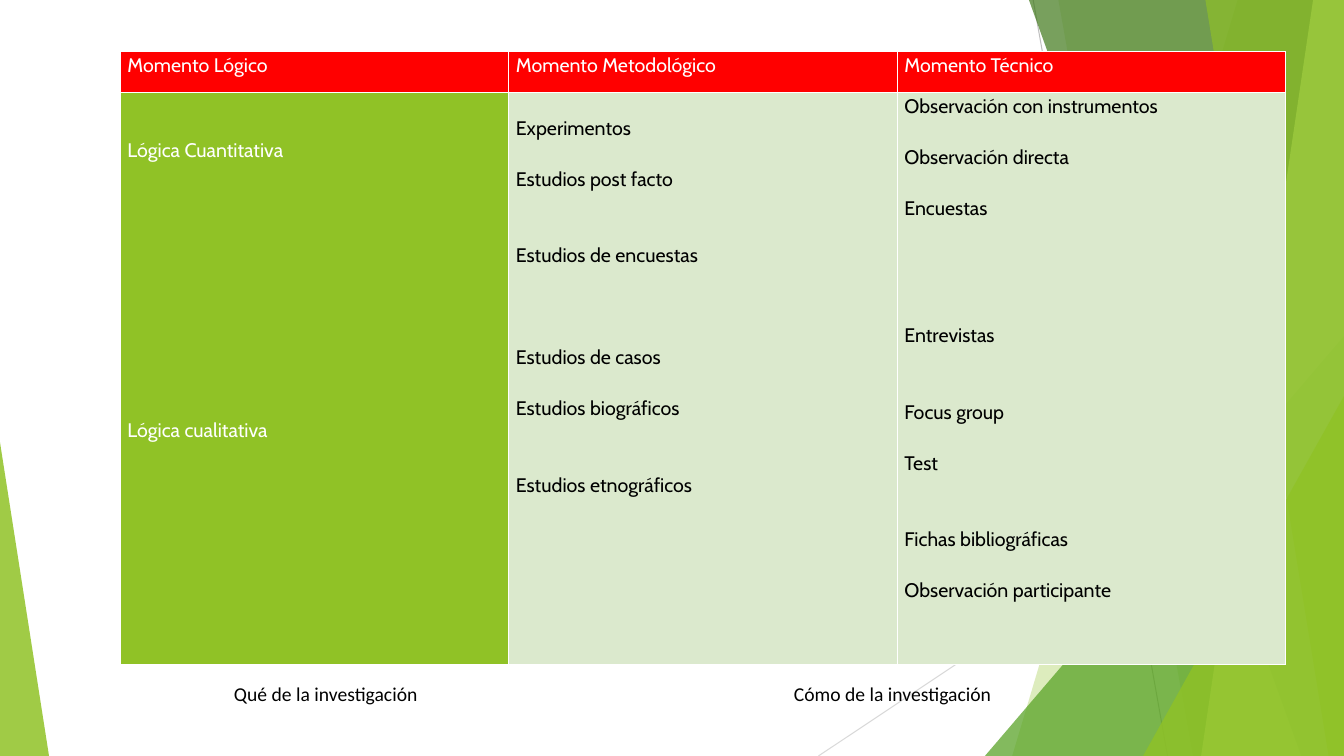
from dataclasses import dataclass
from lxml.etree import SubElement
from pptx import Presentation
from pptx.dml.color import RGBColor
from pptx.enum.shapes import MSO_CONNECTOR, MSO_SHAPE
from pptx.enum.text import MSO_ANCHOR
from pptx.oxml.ns import qn
from pptx.util import Pt


@dataclass
class Theme:
    white: str = "FFFFFF"
    black: str = "000000"
    red: str = "FF0000"
    green: str = "90C226"
    leaf: str = "54A021"
    moss: str = "3F7819"
    lime: str = "C0E474"
    pale: str = "DBE9CD"
    gray: str = "BFBFBF"
    mist: str = "D9D9D9"
    body: str = "Cabin"
    plain: str = "Calibri"
    size: int = 14


theme = Theme()
wide, high = 960, 540
pitch = 18.2


def tint(shape, hue, alpha):
    shape.shadow.inherit = False
    shape.fill.solid()
    shape.fill.fore_color.rgb = RGBColor.from_string(hue)
    shape.line.fill.background()
    color = shape._element.spPr.find(".//" + qn("a:srgbClr"))
    SubElement(color, qn("a:alpha")).set("val", str(alpha * 1000))


def write(para, text, face, hue):
    run = para.add_run()
    run.text = text
    run.font.name = face
    run.font.size = Pt(theme.size)
    run.font.bold = False
    run.font.color.rgb = RGBColor.from_string(hue)


deck = Presentation()
deck.slide_width, deck.slide_height = Pt(wide), Pt(high)
slide = deck.slides.add_slide(deck.slide_layouts[6])
shapes = slide.shapes

for x1, y1, x2, y2, hue in [
    (738, 0, 834, high, theme.gray),
    (wide, 290, 584.6, high, theme.mist),
]:
    line = shapes.add_connector(
        MSO_CONNECTOR.STRAIGHT, Pt(x1), Pt(y1), Pt(x2), Pt(y2))
    line.line.color.rgb = RGBColor.from_string(hue)
    line.line.width = Pt(0.75)
    SubElement(line._element.spPr, qn("a:effectLst"))

facets = [
    ("band", (884, 723), theme.green, 30),
    ("band", (756, 852), theme.green, 20),
    ("peak", (703.5, 240, 256.5, 1), theme.leaf, 72),
    ("band", (735, 929.5), theme.moss, 70),
    ("band", (938, 858), theme.lime, 70),
    ("band", (861, 949), theme.green, 65),
    ("peak", (816.5, 283, 143.5, 1), theme.green, 80),
    ("peak", (0, 316, 35, 0), theme.green, 85),
]
for kind, place, hue, alpha in facets:
    if kind == "band":
        head, foot = place
        pen = shapes.build_freeform(Pt(head), Pt(0))
        pen.add_line_segments(
            [(Pt(wide), Pt(0)), (Pt(wide), Pt(high)), (Pt(foot), Pt(high))])
        facet = pen.convert_to_shape()
    else:
        left, top, width, apex = place
        facet = shapes.add_shape(
            MSO_SHAPE.ISOSCELES_TRIANGLE,
            Pt(left), Pt(top), Pt(width), Pt(high - top))
        facet.adjustments[0] = apex
    tint(facet, hue, alpha)

columns = [
    ("Momento Lógico", theme.green, theme.white, 31.5,
     [(0, "Lógica Cuantitativa"), (10, "Lógica cualitativa")]),
    ("Momento Metodológico", theme.pale, theme.black, 15.75,
     [(0, "Experimentos"), (1, "Estudios post facto"),
      (2, "Estudios de encuestas"), (3, "Estudios de casos"),
      (1, "Estudios biográficos"), (2, "Estudios etnográficos")]),
    ("Momento Técnico", theme.pale, theme.black, 0,
     [(0, "Observación con instrumentos"), (1, "Observación directa"),
      (1, "Encuestas"), (4, "Entrevistas"), (2, "Focus group"), (1, "Test"),
      (2, "Fichas bibliográficas"), (1, "Observación participante")]),
]
table = shapes.add_table(
    2, 3, Pt(86), Pt(36.75), Pt(832.5), Pt(438)).table
table.first_row = table.horz_banding = False
table.rows[0].height, table.rows[1].height = Pt(29.5), Pt(408.5)

for col, (title, back, ink, inset, items) in enumerate(columns):
    table.columns[col].width = Pt(277.5)
    for row, (fill, hue, top, lines) in enumerate([
        (theme.red, theme.white, 0, [(0, title)]),
        (back, ink, inset, items),
    ]):
        cell = table.cell(row, col)
        cell.margin_left = cell.margin_right = Pt(5)
        cell.margin_top, cell.margin_bottom = Pt(top), Pt(0)
        for side in ("a:lnL", "a:lnR", "a:lnT", "a:lnB"):
            edge = SubElement(cell._tc.get_or_add_tcPr(), qn(side))
            edge.set("w", str(Pt(1)))
            paint = SubElement(edge, qn("a:solidFill"))
            SubElement(paint, qn("a:srgbClr")).set("val", theme.white)
        cell.fill.solid()
        cell.fill.fore_color.rgb = RGBColor.from_string(fill)
        frame = cell.text_frame
        for spot, (gap, text) in enumerate(lines):
            para = frame.add_paragraph() if spot else frame.paragraphs[0]
            para.line_spacing = 1.07
            para.space_before = Pt(gap * pitch)
            write(para, text, theme.body, hue)

for left, text in [
    (160, "Qué de la investigación"),
    (560, "Cómo de la investigación"),
]:
    box = shapes.add_textbox(Pt(left), Pt(483), Pt(200), Pt(24.5))
    frame = box.text_frame
    frame.word_wrap = True
    frame.vertical_anchor = MSO_ANCHOR.MIDDLE
    write(frame.paragraphs[0], text, theme.plain, theme.black)

deck.save("out.pptx")
